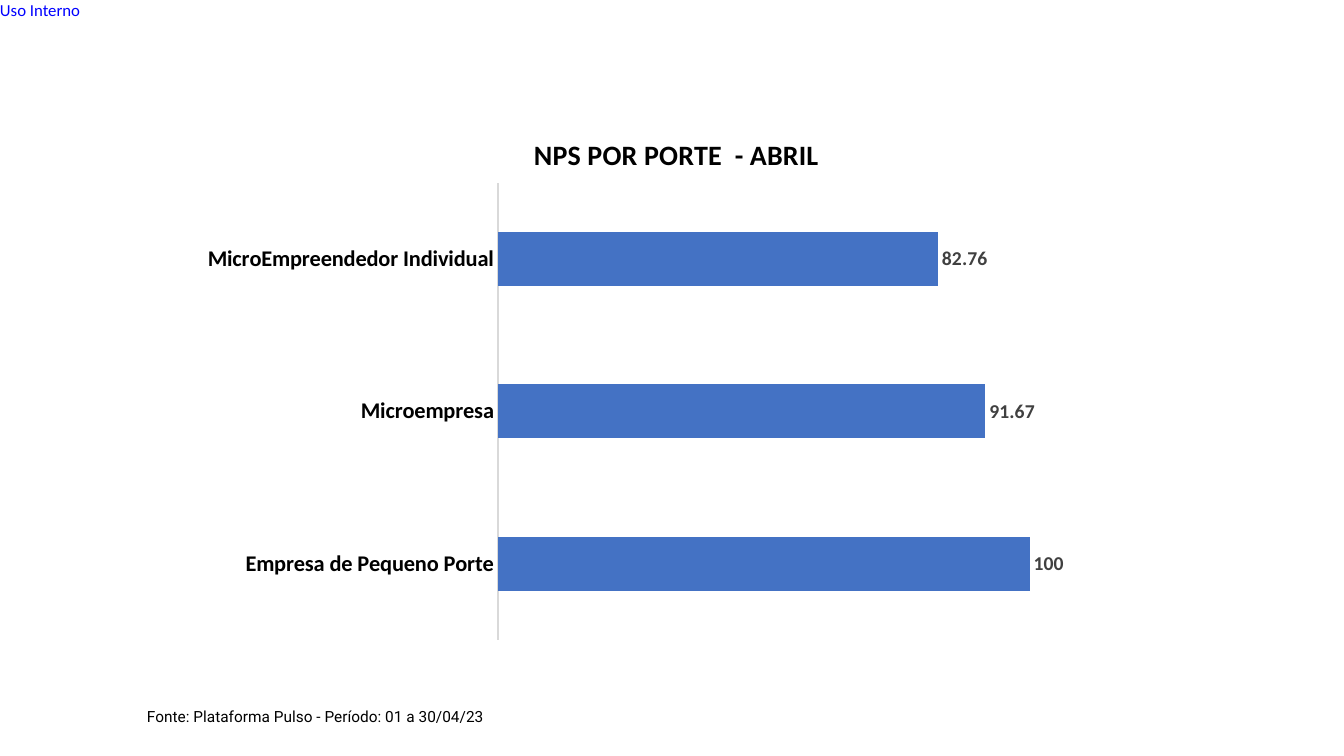
"""Build a slide with a bar chart of NPS by company size for April."""
from dataclasses import dataclass

from pptx import Presentation
from pptx.chart.data import CategoryChartData
from pptx.dml.color import RGBColor
from pptx.enum.chart import XL_CHART_TYPE, XL_LABEL_POSITION, XL_TICK_MARK
from pptx.enum.text import MSO_AUTO_SIZE
from pptx.oxml import parse_xml
from pptx.oxml.ns import nsdecls
from pptx.util import Emu, Pt

BAR_CLUSTERED = XL_CHART_TYPE.BAR_CLUSTERED
OUTSIDE_END = XL_LABEL_POSITION.OUTSIDE_END
NO_TICK = XL_TICK_MARK.NONE
GROW = MSO_AUTO_SIZE.SHAPE_TO_FIT_TEXT
EMU_PER_PX = 914400 / 100.8


@dataclass(frozen=True)
class Theme:
    """Colours, fonts and type sizes of the slide."""
    text: str = "000000"
    notice: str = "0000FF"
    bar: str = "4472C4"
    label: str = "404040"
    axis: str = "D9D9D9"
    font: str = "Calibri"
    source_font: str = "Roboto"
    title_size: int = 20
    category_size: int = 16
    label_size: int = 14
    notice_size: int = 12
    source_size: int = 11
    chart_size: int = 10


def px(length):
    """Turn pixels into EMU."""
    return Emu(round(length * EMU_PER_PX))


def style(font, size, color, name, bold=False):
    """Set size, colour, typeface and weight of a font."""
    font.size = Pt(size)
    font.color.rgb = RGBColor.from_string(color)
    font.name = name
    font.bold = bold


theme = Theme()
presentation = Presentation()
presentation.slide_width = px(1344)
presentation.slide_height = px(756)
slide = presentation.slides.add_slide(presentation.slide_layouts[6])

texts = [
    ("Uso Interno", (0, 0, 85, 20), (0, 0),
     (theme.notice_size, theme.notice, theme.font)),
    ("Fonte: Plataforma Pulso - Período: 01 a 30/04/23", (137, 702, 455, 29), (10, 5),
     (theme.source_size, theme.text, theme.source_font)),
]
for text, box, (side_inset, edge_inset), font_style in texts:
    frame = slide.shapes.add_textbox(*map(px, box)).text_frame
    frame.word_wrap = True
    frame.auto_size = GROW
    frame.margin_left = frame.margin_right = px(side_inset)
    frame.margin_top = frame.margin_bottom = px(edge_inset)
    run = frame.paragraphs[0].add_run()
    run.text = text
    style(run.font, *font_style)

chart_data = CategoryChartData()
chart_data.categories = [
    "Empresa de Pequeno Porte", "Microempresa", "MicroEmpreendedor Individual"]
chart_data.add_series("Series 1", (100, 91.67, 82.76))
chart_left, chart_top, chart_width, chart_height = 188, 105, 967, 546
chart = slide.shapes.add_chart(
    BAR_CLUSTERED, px(chart_left), px(chart_top), px(chart_width), px(chart_height),
    chart_data).chart
style(chart.font, theme.chart_size, theme.text, theme.font)
chart.has_legend = False

chart.has_title = True
title_run = chart.chart_title.text_frame.paragraphs[0].add_run()
title_run.text = "NPS POR PORTE  - ABRIL"
style(title_run.font, theme.title_size, theme.text, theme.font, True)

category_axis = chart.category_axis
category_axis.major_tick_mark = category_axis.minor_tick_mark = NO_TICK
category_axis.format.line.color.rgb = RGBColor.from_string(theme.axis)
category_axis.format.line.width = Pt(0.75)
style(category_axis.tick_labels.font, theme.category_size, theme.text, theme.font, True)

value_axis = chart.value_axis
value_axis.minimum_scale = 0
value_axis.maximum_scale = 120
value_axis.has_major_gridlines = False
value_axis.visible = False

plot = chart.plots[0]
plot.gap_width = 182
plot.vary_by_categories = False
series = plot.series[0]
series.format.fill.solid()
series.format.fill.fore_color.rgb = RGBColor.from_string(theme.bar)
labels = series.data_labels
labels.show_value = True
labels.position = OUTSIDE_END
style(labels.font, theme.label_size, theme.label, theme.font, True)

plot_area = chart.element.xpath("c:chart/c:plotArea")[0]
title = chart.chart_title.text_frame.paragraphs[0]
layouts = [
    (chart.element.xpath("c:chart/c:title")[0], 1, "",
     {"x": (529 - chart_left) / chart_width, "y": (130 - chart_top) / chart_height}),
    (plot_area, 0, '<c:layoutTarget val="inner"/>',
     {"x": (498 - chart_left) / chart_width, "y": (183 - chart_top) / chart_height,
      "w": 638 / chart_width, "h": 457 / chart_height}),
]
for parent, index, target, fractions in layouts:
    for old_layout in parent.xpath("c:layout"):
        parent.remove(old_layout)
    modes = "".join(f'<c:{key}Mode val="edge"/>' for key in "xy")
    values = "".join(f'<c:{key} val="{value:.4f}"/>' for key, value in fractions.items())
    parent.insert(index, parse_xml(
        f'<c:layout {nsdecls("c")}><c:manualLayout>{target}{modes}{values}'
        "</c:manualLayout></c:layout>"))

presentation.save("out.pptx")
